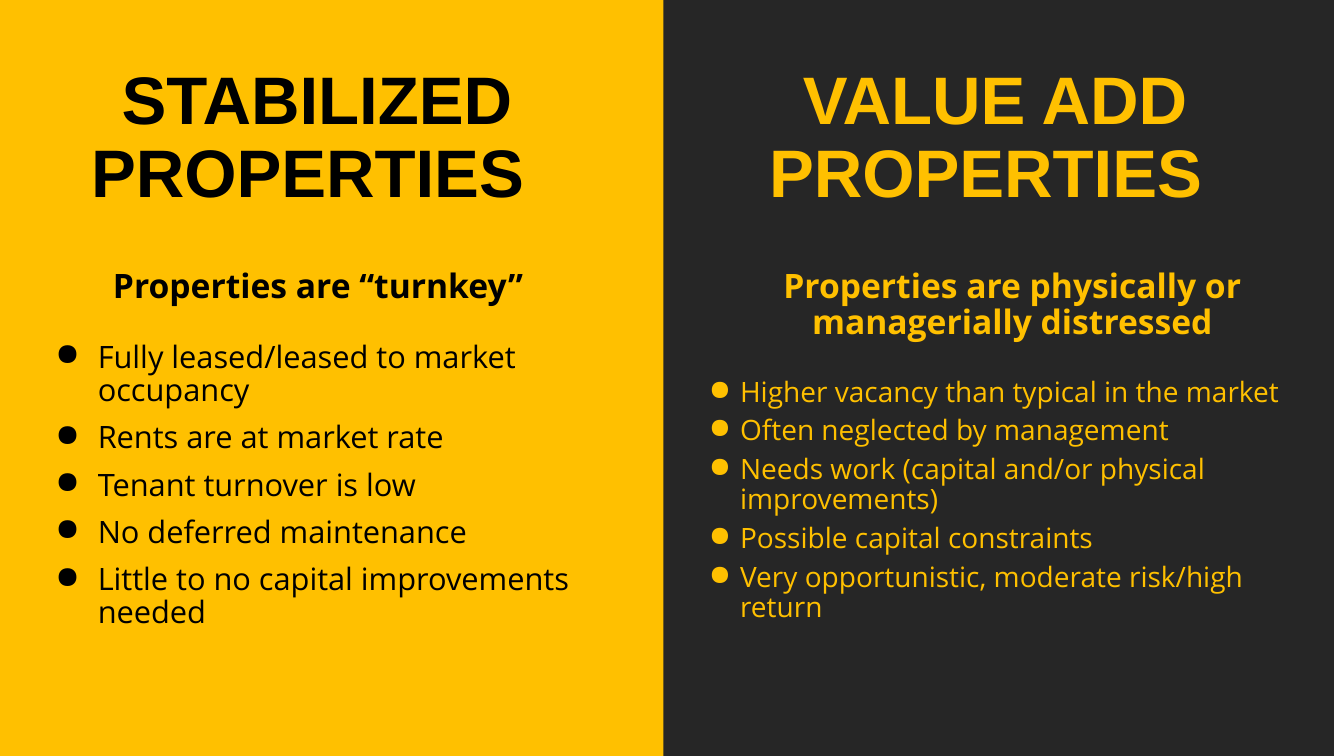
from dataclasses import dataclass

from lxml import etree
from pptx import Presentation
from pptx.dml.color import RGBColor
from pptx.enum.shapes import MSO_SHAPE as SHAPE
from pptx.enum.text import MSO_ANCHOR as ANCHOR, PP_ALIGN as ALIGN
from pptx.oxml.ns import qn
from pptx.util import Inches, Pt

AMBER = RGBColor(0xFF, 0xC0, 0x00)
CHARCOAL = RGBColor(0x26, 0x26, 0x26)
BLACK = RGBColor(0x00, 0x00, 0x00)


@dataclass
class Panel:
    left: float
    fill: RGBColor
    ink: RGBColor
    title: str
    title_box: tuple[float, float, float, float]
    heading: str
    body_box: tuple[float, float, float, float]
    items: list[str]
    size: int
    gap: int
    indent: float
    hang: float


PANELS = [
    Panel(6.51, CHARCOAL, AMBER, "VALUE ADD PROPERTIES ", (6.91, 0.53, 5.92, 1.87),
          "Properties are physically or managerially distressed",
          (6.85, 2.54, 6.38, 6.19),
          ["Higher vacancy than typical in the market",
           "Often neglected by management",
           "Needs work (capital and/or physical improvements)",
           "Possible capital constraints",
           "Very opportunistic, moderate risk/high return"],
          20, 6, 0.36, 0.31),
    Panel(-0.14, AMBER, BLACK, "STABILIZED PROPERTIES ", (0.23, 0.53, 5.83, 2.14),
          "Properties are “turnkey”", (0.38, 2.54, 5.55, 6.19),
          ["Fully leased/leased to market occupancy",
           "Rents are at market rate",
           "Tenant turnover is low",
           "No deferred maintenance",
           "Little to no capital improvements needed"],
          22, 10, 0.46, 0.42),
]


def add_box(s, box: tuple[float, float, float, float]):
    """Add an empty wrapping text box and return its text frame."""
    tf = s.shapes.add_textbox(*map(Inches, box)).text_frame
    tf.word_wrap = True
    tf.vertical_anchor = ANCHOR.TOP
    tf.margin_left = tf.margin_right = tf.margin_top = tf.margin_bottom = Inches(0.13)
    return tf


def add_run(p, text: str, font: str, size: int, color: RGBColor, bold: bool) -> None:
    """Add one formatted run to a paragraph."""
    p.line_spacing = 0.9
    r = p.add_run()
    r.text = text
    r.font.name, r.font.size, r.font.bold = font, Pt(size), bold
    r.font.color.rgb = color


def set_bullet(p, indent: float, hang: float, color: RGBColor) -> None:
    """Give a paragraph a round bullet with a hanging indent."""
    pPr = p._p.get_or_add_pPr()
    pPr.set("marL", str(Inches(indent)))
    pPr.set("indent", str(-Inches(hang)))
    buClr = etree.SubElement(pPr, qn("a:buClr"))
    etree.SubElement(buClr, qn("a:srgbClr")).set("val", str(color))
    etree.SubElement(pPr, qn("a:buChar")).set("char", "●")


def draw_background(s, panel: Panel) -> None:
    """Draw the coloured half of the slide."""
    sp = s.shapes.add_shape(SHAPE.RECTANGLE, Inches(panel.left), 0,
                            Inches(6.72), Inches(7.5))
    sp.shadow.inherit = False
    sp.fill.solid()
    sp.fill.fore_color.rgb = panel.fill
    sp.line.fill.background()


def draw_text(s, panel: Panel) -> None:
    """Draw the title, heading and bullet list of a panel."""
    p = add_box(s, panel.title_box).paragraphs[0]
    p.alignment = ALIGN.CENTER
    add_run(p, panel.title, "Arial", 48, panel.ink, True)

    tf = add_box(s, panel.body_box)
    p = tf.paragraphs[0]
    p.alignment = ALIGN.CENTER
    add_run(p, panel.heading, "Open Sans", 24, panel.ink, True)
    for i, item in enumerate(panel.items):
        p = tf.add_paragraph()
        p.space_before = Pt(panel.gap if i else 26)
        add_run(p, item, "Open Sans", panel.size, panel.ink, False)
        set_bullet(p, panel.indent, panel.hang, panel.ink)


def main() -> None:
    """Build and save the slide."""
    prs = Presentation()
    prs.slide_width, prs.slide_height = Inches(13.33), Inches(7.5)
    s = prs.slides.add_slide(prs.slide_layouts[6])
    for panel in PANELS:
        draw_background(s, panel)
    for panel in PANELS:
        draw_text(s, panel)
    prs.save("out.pptx")


if __name__ == "__main__":
    main()
